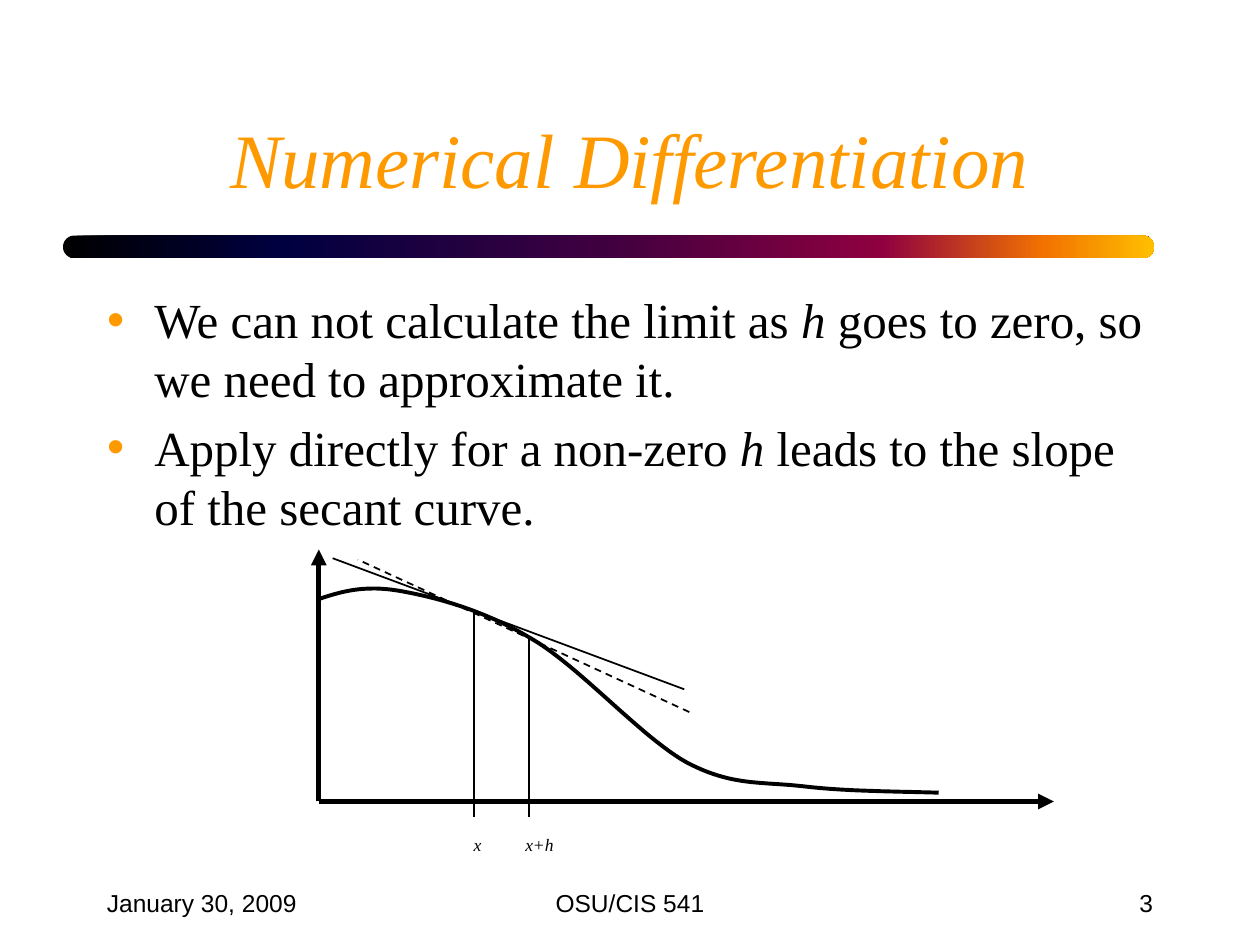
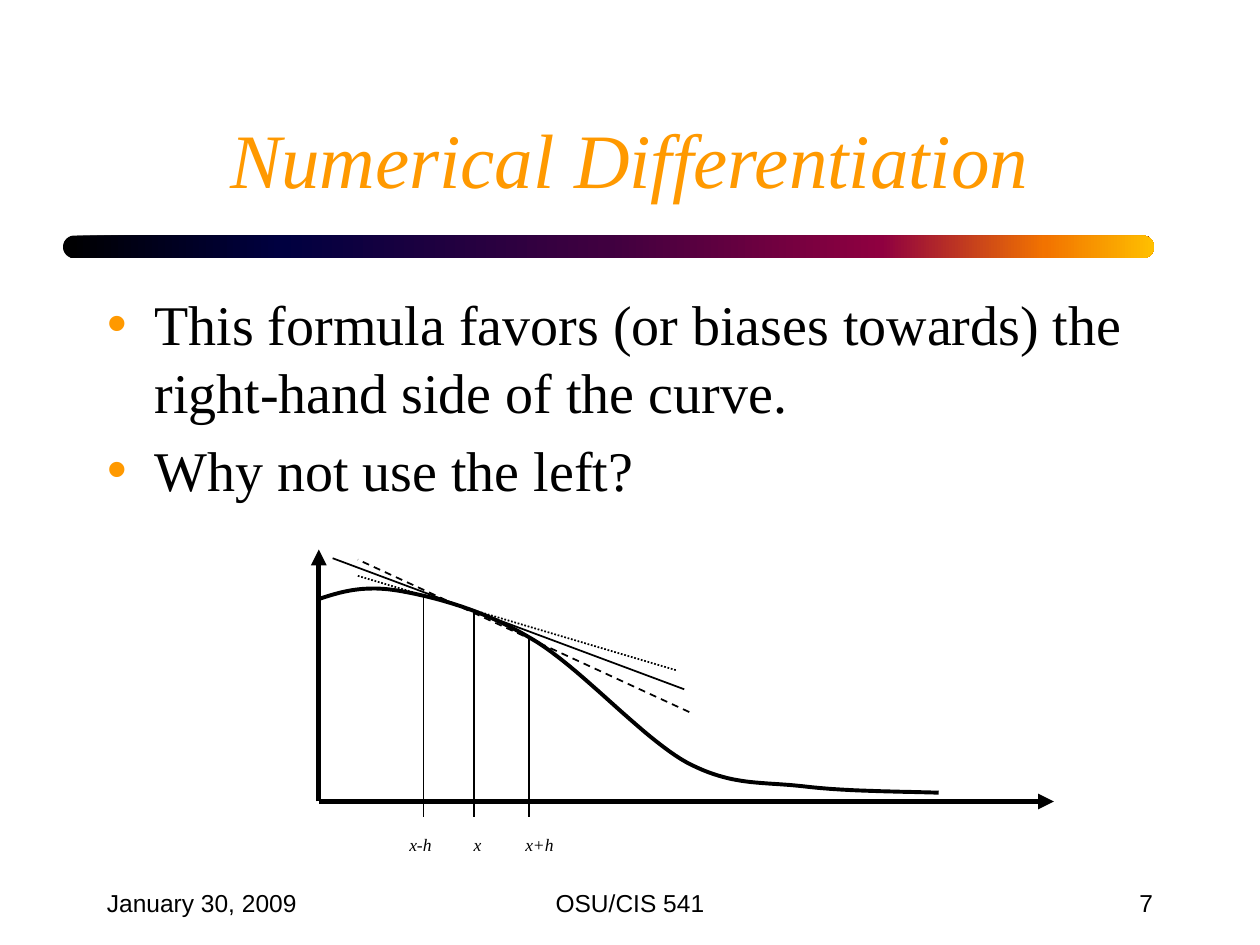
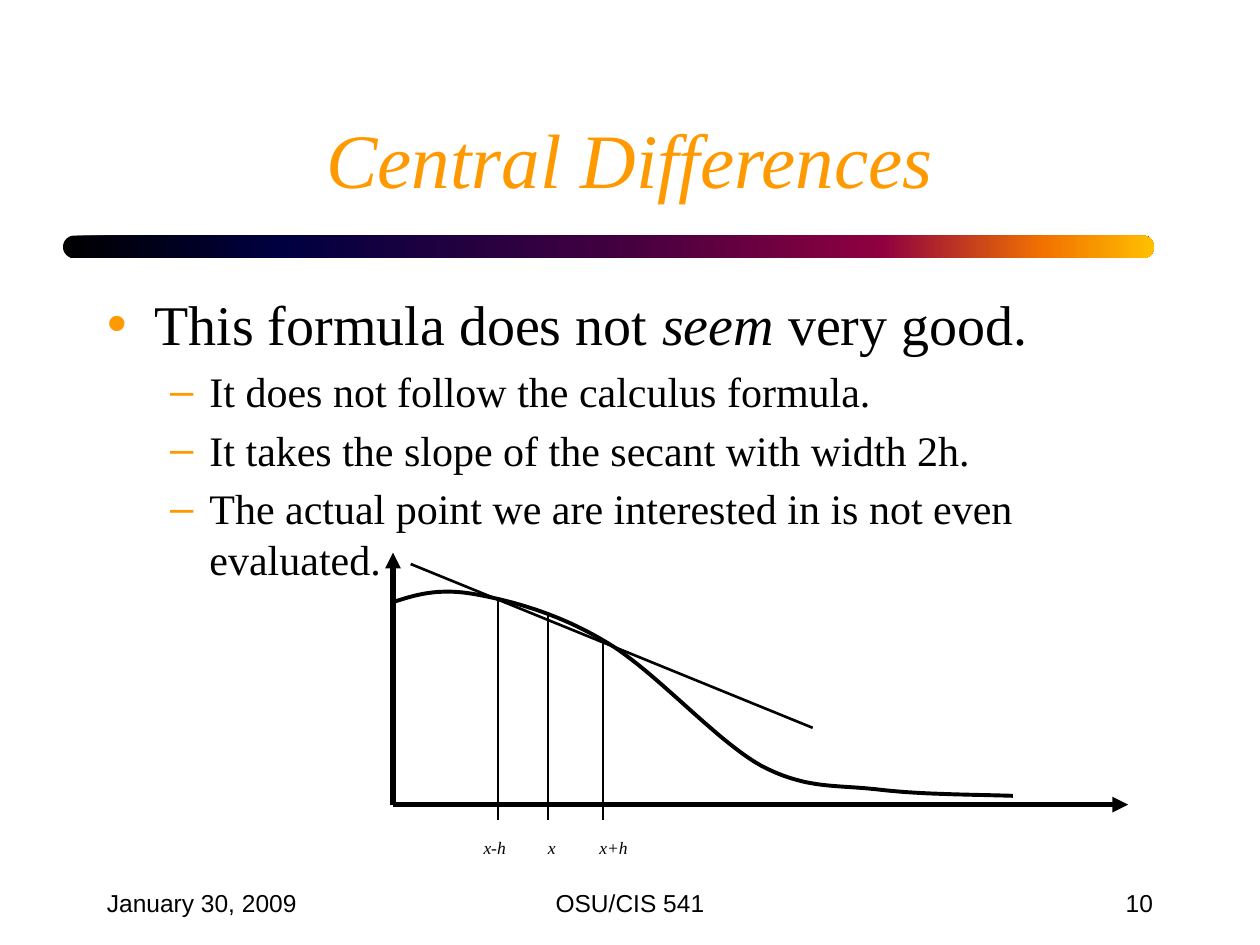
"""Three lecture slides on numerical differentiation with secant diagrams."""
from lxml import etree
from pptx import Presentation
from pptx.dml.color import RGBColor
from pptx.enum import dml, shapes, text
from pptx.oxml import ns
from pptx.util import Pt

COLORS = {"ink": "000000", "accent": "FF9900"}
GRADIENT = [(0, "000000"), (20, "000040"), (50, "400040"),
            (75, "8F0040"), (90, "F27300"), (100, "FFBF00")]
SERIF, SANS = "Times New Roman", "Arial"
ALIGN, DASH = text.PP_ALIGN, dml.MSO_LINE

TITLE_BOX = (54, 30, 612, 90)
BODY_BOX = (54, 162, 612, 324)
BAR_BOX = (36, 134.6, 623.5, 13)
FOOTER_TOP, FOOTER_HEIGHT = 498, 36
DATE, COURSE = "January 30, 2009", "OSU/CIS 541"

LEVELS = [("•", 27, 27), ("–", 58.5, 22.5)]

AXIS_ENDS = [(0, -144), (420, 0)]
CURVE_START = (0.7, -115.9)
CURVE = [
    [(13.7, -120.2), (26.6, -123.8), (46.8, -120.2)],
    [(67, -116.6), (94.3, -109.4), (121.7, -92.9)],
    [(149, -77), (184.3, -36.7), (210.2, -22.3)],
    [(236.2, -8.6), (252.7, -11.5), (277.2, -8.6)],
    [(301, -5.8), (327.6, -5.8), (354.2, -5)],
]
CURVE_STEPS = 24
TICK_BOTTOM, LABEL_TOP, LABEL_HEIGHT = 8.6, 15.1, 19.4
MARKS = {
    "x-h": {"x": 59.8, "top": -117.4, "left": 44.6, "width": 27.4},
    "x": {"x": 88.6, "top": -108.7, "left": 81.4, "width": 18.7},
    "x+h": {"x": 120.2, "top": -94.3, "left": 110.9, "width": 31},
}
SLOPES = {
    "tangent": ((7.9, -139), (208.8, -64.1), 1, None),
    "forward": ((211.7, -51.1), (22.3, -138.2), 1, DASH.DASH),
    "backward": ((22.3, -128.9), (204.5, -74.9), 1, DASH.ROUND_DOT),
    "central": ((10.1, -137.5), (239.8, -43.9), 1.5, None),
}

SLIDES = [
    {"title": "Numerical Differentiation", "number": "3",
     "body": [(0, 28, "We can not calculate the limit as *h* goes to zero, "
                      "so we need to approximate it."),
              (0, 28, "Apply directly for a non-zero *h* leads to the slope "
                      "of the secant curve.")],
     "origin": (182.2, 458), "marks": ["x", "x+h"],
     "slopes": ["tangent", "forward"]},
    {"title": "Numerical Differentiation", "number": "7",
     "body": [(0, 32, "This formula favors (or biases towards) the "
                      "right-hand side of the curve."),
              (0, 32, "Why not use the left?")],
     "origin": (182.2, 458), "marks": ["x", "x+h", "x-h"],
     "slopes": ["tangent", "forward", "backward"]},
    {"title": "Central Differences", "number": "10",
     "body": [(0, 32, "This formula does not *seem* very good."),
              (1, 24, "It does not follow the calculus formula."),
              (1, 24, "It takes the slope of the secant with width 2h."),
              (1, 24, "The actual point we are interested in is not even "
                      "evaluated.")],
     "origin": (224.6, 459.8), "marks": ["x", "x+h", "x-h"],
     "slopes": ["central"]},
]


def rgb(name):
    return RGBColor.from_string(COLORS[name])


def sub(parent, tag, **attrs):
    return etree.SubElement(parent, ns.qn(tag), **attrs)


def place(sp, box):
    sp.left, sp.top, sp.width, sp.height = map(Pt, box)


def style(font, name, size, color="ink", italic=False):
    font.name, font.size, font.italic = name, Pt(size), italic
    font.color.rgb = rgb(color)


def add_label(s, box, words, font, size, align=ALIGN.LEFT, italic=False):
    sp = s.shapes.add_textbox(*map(Pt, box))
    tf = sp.text_frame
    tf.text = words
    tf.word_wrap = False
    p = tf.paragraphs[0]
    p.alignment = align
    style(p.runs[0].font, font, size, italic=italic)
    return tf


def add_bar(s):
    sp = s.shapes.add_shape(shapes.MSO_SHAPE.ROUNDED_RECTANGLE, *map(Pt, BAR_BOX))
    sp.adjustments[0] = 0.5
    sp.shadow.inherit = False
    sp.line.fill.background()
    sp.fill.gradient()
    sp.fill.gradient_angle = 0
    stops = sp.element.spPr.find(ns.qn("a:gradFill")).find(ns.qn("a:gsLst"))
    for stop in list(stops):
        stops.remove(stop)
    for percent, color in GRADIENT:
        stop = sub(stops, "a:gs", pos=str(percent * 1000))
        sub(stop, "a:srgbClr", val=color)


def add_title(s, words):
    sp = s.shapes.title
    place(sp, TITLE_BOX)
    tf = sp.text_frame
    tf.text = words
    tf.vertical_anchor = text.MSO_ANCHOR.BOTTOM
    tf.auto_size = text.MSO_AUTO_SIZE.NONE
    p = tf.paragraphs[0]
    p.alignment = ALIGN.CENTER
    style(p.runs[0].font, SERIF, 44, "accent", True)


def add_body(s, items):
    sp = s.placeholders[1]
    place(sp, BODY_BOX)
    tf = sp.text_frame
    tf.auto_size = text.MSO_AUTO_SIZE.NONE
    for i, (level, size, words) in enumerate(items):
        p = tf.add_paragraph() if i else tf.paragraphs[0]
        p.level = level
        bullet, margin, hang = LEVELS[level]
        pPr = p._p.get_or_add_pPr()
        pPr.set("marL", str(Pt(margin)))
        pPr.set("indent", str(-Pt(hang)))
        sub(sub(pPr, "a:buClr"), "a:srgbClr", val=COLORS["accent"])
        sub(pPr, "a:buChar", char=bullet)
        p.space_before = Pt(0.2 * size if i else 0)
        for j, part in enumerate(words.split("*")):
            r = p.add_run()
            r.text = part
            style(r.font, SERIF, size, italic=j % 2 == 1)


def add_footer(s, number):
    for left, width, words, align in [(54, 150, DATE, ALIGN.LEFT),
                                      (246, 228, COURSE, ALIGN.CENTER),
                                      (516, 150, number, ALIGN.RIGHT)]:
        tf = add_label(s, (left, FOOTER_TOP, width, FOOTER_HEIGHT),
                       words, SANS, 14, align)
        tf.vertical_anchor = text.MSO_ANCHOR.MIDDLE


def add_line(s, origin, start, end, width, dash=None, arrow=False):
    ends = [Pt(o + d) for point in (start, end) for o, d in zip(origin, point)]
    cx = s.shapes.add_connector(shapes.MSO_CONNECTOR.STRAIGHT, *ends)
    cx.line.color.rgb = rgb("ink")
    cx.line.width = Pt(width)
    if dash:
        cx.line.dash_style = dash
    if arrow:
        sub(cx.line._get_or_add_ln(), "a:tailEnd", type="triangle")
    sub(cx.element.spPr, "a:effectLst")


def curve_points():
    start, points = CURVE_START, []
    for c1, c2, end in CURVE:
        for step in range(1, CURVE_STEPS + 1):
            t = step / CURVE_STEPS
            u = 1 - t
            points.append(tuple(
                u**3 * a + 3 * u * u * t * b + 3 * u * t * t * c + t**3 * d
                for a, b, c, d in zip(start, c1, c2, end)))
        start = end
    return points


def add_curve(s, origin):
    outline = s.shapes.build_freeform(*map(Pt, CURVE_START))
    outline.add_line_segments([(Pt(x), Pt(y)) for x, y in curve_points()], close=False)
    sp = outline.convert_to_shape(*map(Pt, origin))
    sp.shadow.inherit = False
    sp.fill.background()
    sp.line.color.rgb = rgb("ink")
    sp.line.width = Pt(2.25)


def add_diagram(s, origin, marks, slopes):
    for end in AXIS_ENDS:
        add_line(s, origin, (0, 0), end, 3, arrow=True)
    add_curve(s, origin)
    for name in marks:
        mark = MARKS[name]
        add_line(s, origin, (mark["x"], mark["top"]), (mark["x"], TICK_BOTTOM), 1)
        box = (origin[0] + mark["left"], origin[1] + LABEL_TOP,
               mark["width"], LABEL_HEIGHT)
        tf = add_label(s, box, name, SERIF, 10, italic=True)
        tf.auto_size = text.MSO_AUTO_SIZE.SHAPE_TO_FIT_TEXT
    for name in slopes:
        add_line(s, origin, *SLOPES[name])


def main():
    prs = Presentation()
    prs.slide_width, prs.slide_height = Pt(720), Pt(540)
    for slide in SLIDES:
        s = prs.slides.add_slide(prs.slide_layouts[1])
        add_bar(s)
        add_footer(s, slide["number"])
        add_title(s, slide["title"])
        add_body(s, slide["body"])
        add_diagram(s, slide["origin"], slide["marks"], slide["slopes"])
    prs.save("out.pptx")


if __name__ == "__main__":
    main()
